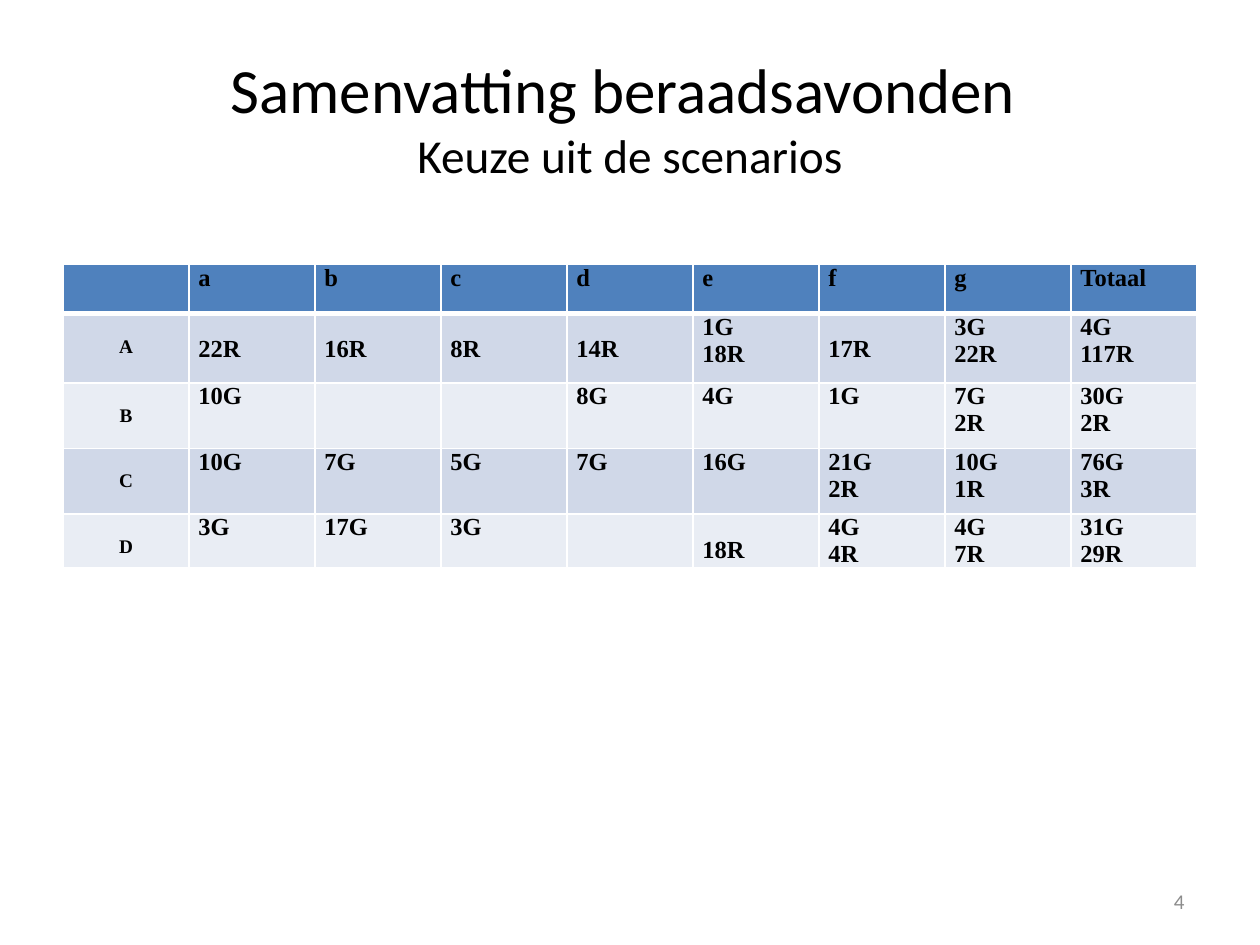
import copy

import pptx
import pptx.dml.color
import pptx.enum.text
import pptx.oxml
import pptx.oxml.ns
import pptx.util

Cm = pptx.util.Cm
Pt = pptx.util.Pt
PP_ALIGN = pptx.enum.text.PP_ALIGN
MSO_ANCHOR = pptx.enum.text.MSO_ANCHOR

COLUMNS = ["", "a", "b", "c", "d", "e", "f", "g", "Totaal"]
SCENARIOS = [
    ["A", "22R", "16R", "8R", "14R", "1G 18R", "17R", "3G 22R", "4G 117R"],
    ["B", "10G", "", "", "8G", "4G", "1G", "7G 2R", "30G 2R"],
    ["C", "10G", "7G", "5G", "7G", "16G", "21G 2R", "10G 1R", "76G 3R"],
    ["D", "3G", "17G", "3G", "", "18R", "4G 4R", "4G 7R", "31G 29R"],
]
ROW_HEIGHTS = [0.99, 1.4, 1.32, 1.32, 1.07]
HEADER_FILL = "4F81BD"
BAND_FILLS = ["E9EDF4", "D0D8E8"]


def rgb(value):
    """Return the colour for a hex string."""
    return pptx.dml.color.RGBColor.from_string(value)


def add_run(p, text, size, font="Calibri", color="000000", bold=False):
    """Add one formatted run to a paragraph."""
    r = p.add_run()
    r.text = text
    r.font.size = Pt(size)
    r.font.name = font
    r.font.bold = bold
    r.font.color.rgb = rgb(color)
    return r


def set_title(s, heading, subheading):
    """Fill the title placeholder with a large and a smaller line."""
    sp = s.shapes.title
    sp.left, sp.top, sp.width, sp.height = Cm(1.27), Cm(0.76), Cm(22.86), Cm(3.18)
    tf = sp.text_frame
    tf.auto_size = pptx.enum.text.MSO_AUTO_SIZE.NONE
    tf.vertical_anchor = MSO_ANCHOR.MIDDLE
    p = tf.paragraphs[0]
    p.alignment = PP_ALIGN.CENTER
    r = add_run(p, heading, 36)
    p.add_line_break()
    p._p[-1].append(copy.deepcopy(r._r.rPr))
    add_run(p, subheading, 27)


def set_border(cell, side, width):
    """Draw a white line on one side of a cell."""
    line = pptx.oxml.parse_xml(
        f'<a:{side} {pptx.oxml.ns.nsdecls("a")} w="{Pt(width)}">'
        f'<a:solidFill><a:srgbClr val="FFFFFF"/></a:solidFill></a:{side}>'
    )
    cell._tc.get_or_add_tcPr().append(line)


def format_cell(cell, row):
    """Set the borders, fill and margins of a cell."""
    set_border(cell, "lnL", 1)
    set_border(cell, "lnR", 1)
    set_border(cell, "lnT", 3 if row == 1 else 1)
    set_border(cell, "lnB", 3 if row == 0 else 1)
    cell.fill.solid()
    cell.fill.fore_color.rgb = rgb(BAND_FILLS[row % 2] if row else HEADER_FILL)
    cell.margin_left = cell.margin_right = Cm(0.19)
    cell.margin_top = cell.margin_bottom = 0


def fill_cell(cell, text, row, col):
    """Write a cell, with red-only votes and row labels one line lower."""
    is_label = row > 0 and col == 0
    lines = text.split()
    if is_label or (row > 0 and len(lines) == 1 and text.endswith("R")):
        cell.margin_top = Cm(0.45)
    tf = cell.text_frame
    for i, line in enumerate(lines):
        p = tf.add_paragraph() if i else tf.paragraphs[0]
        p.alignment = PP_ALIGN.CENTER if is_label else PP_ALIGN.LEFT
        add_run(p, line, 11 if is_label else 14, "Times New Roman", bold=True)


def add_vote_table(s):
    """Add the table of votes per evening and scenario."""
    rows = [COLUMNS] + SCENARIOS
    table = s.shapes.add_table(
        len(rows), len(COLUMNS), Cm(1.27), Cm(5.33), Cm(22.86), Cm(sum(ROW_HEIGHTS))
    ).table
    for column in table.columns:
        column.width = Cm(2.54)
    for row, texts in enumerate(rows):
        table.rows[row].height = Cm(ROW_HEIGHTS[row])
        for col, text in enumerate(texts):
            cell = table.cell(row, col)
            format_cell(cell, row)
            fill_cell(cell, text, row, col)


def add_page_number(s, number):
    """Add the page number at the bottom right."""
    sp = s.shapes.add_textbox(Cm(18.2), Cm(17.65), Cm(5.93), Cm(1.02))
    tf = sp.text_frame
    tf.word_wrap = True
    tf.vertical_anchor = MSO_ANCHOR.MIDDLE
    p = tf.paragraphs[0]
    p.alignment = PP_ALIGN.RIGHT
    add_run(p, number, 12, color="8C8C8C")


def main():
    """Build the slide and save it."""
    prs = pptx.Presentation()
    prs.slide_width, prs.slide_height = Cm(25.4), Cm(19.05)
    s = prs.slides.add_slide(prs.slide_layouts[5])
    set_title(s, "Samenvatting beraadsavonden ", "Keuze uit de scenarios")
    add_vote_table(s)
    add_page_number(s, "4")
    prs.save("out.pptx")


if __name__ == "__main__":
    main()
